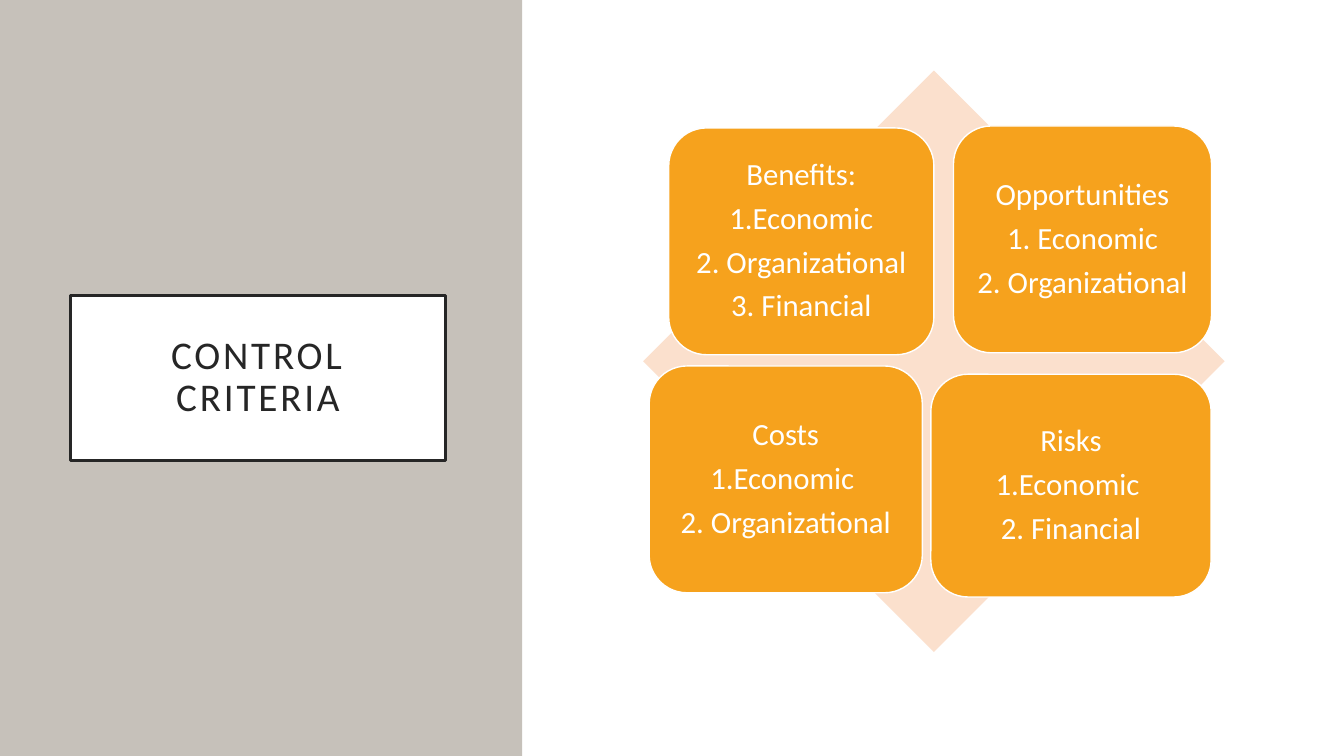
from pptx import Presentation
from pptx.dml.color import RGBColor
from pptx.enum import shapes, text
from pptx.util import Pt

HUES = {"stone": "C6C1BA", "white": "FFFFFF", "ink": "262626",
        "peach": "FBE0CD", "amber": "F6A21D"}
KINDS = shapes.MSO_SHAPE

deck = Presentation()
deck.slide_width, deck.slide_height = Pt(960), Pt(540)
slide = deck.slides.add_slide(deck.slide_layouts[6])


def draw(kind, box, fill, line=None, width=0):
    shape = slide.shapes.add_shape(kind, *map(Pt, box))
    shape.shadow.inherit = False
    shape.fill.solid()
    shape.fill.fore_color.rgb = RGBColor.from_string(HUES[fill])
    if line:
        shape.line.color.rgb = RGBColor.from_string(HUES[line])
        shape.line.width = Pt(width)
    else:
        shape.line.fill.background()
    return shape


def write(shape, lines, size, hue, inset, after=0):
    """Fill the shape with centred paragraphs and return their runs."""
    frame = shape.text_frame
    frame.word_wrap = True
    frame.vertical_anchor = text.MSO_ANCHOR.MIDDLE
    for side in ("left", "top", "right", "bottom"):
        setattr(frame, f"margin_{side}", Pt(inset))
    form = {"alignment": text.PP_ALIGN.CENTER, "line_spacing": 0.9,
            "space_after": Pt(after)}
    face = {"name": "Calibri", "size": Pt(size)}
    runs = []
    for i, line in enumerate(lines):
        para = frame.add_paragraph() if i else frame.paragraphs[0]
        for key, value in form.items():
            setattr(para, key, value)
        run = para.add_run()
        run.text = line
        for key, value in face.items():
            setattr(run.font, key, value)
        run.font.color.rgb = RGBColor.from_string(HUES[hue])
        runs.append(run)
    return runs


# Left panel with the title, right panel for the diagram
draw(KINDS.RECTANGLE, (0, 0, 373, 540), "stone")
title = draw(KINDS.RECTANGLE, (50.4, 211, 267.8, 118), "white", "ink", 2.5)
for run in write(title, ["CONTROL CRITERIA"], 28, "ink", 14.4):
    run.font._element.set("spc", "200")
draw(KINDS.RECTANGLE, (374, 0, 586, 540), "white")

# Diamond with one card per group of criteria
draw(KINDS.DIAMOND, (459.4, 50.4, 415.4, 415.4), "peach")
cards = [
    ((477.7, 91.4, 189.4, 162),
     ["Benefits:", "1.Economic", "2. Organizational", "3. Financial"]),
    ((681.1, 90, 184.3, 162),
     ["Opportunities", "1. Economic", "2. Organizational"]),
    ((463.7, 261.4, 195.1, 162),
     ["Costs", "1.Economic ", "2. Organizational"]),
    ((664.9, 267.3, 200.2, 159.1),
     ["Risks", "1.Economic ", "2. Financial"]),
]
for box, lines in cards:
    card = draw(KINDS.ROUNDED_RECTANGLE, box, "amber", "white", 1)
    write(card, lines, 22, "white", 6.5, 7.5)

deck.save("out.pptx")
